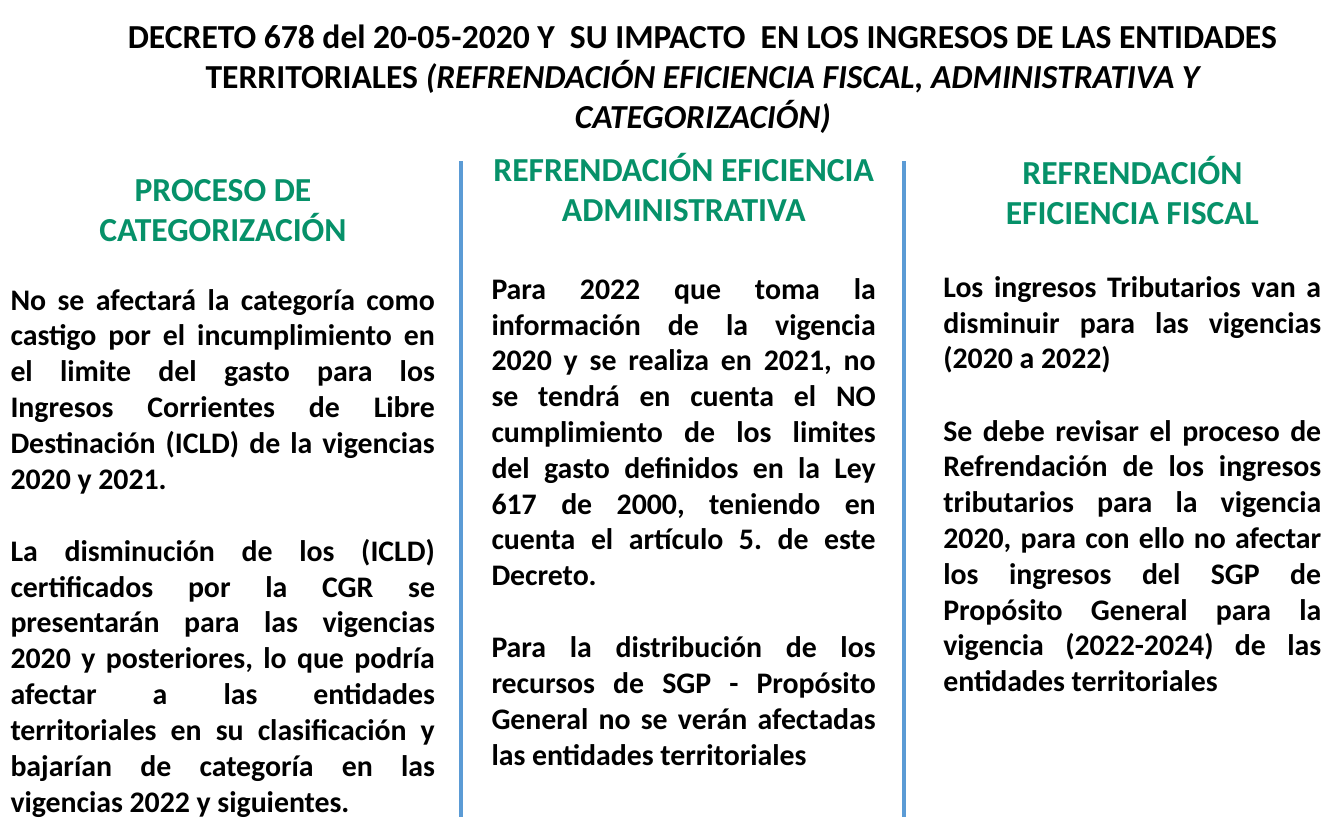
"""Build the slide on Decree 678 and its impact on territorial income."""
from typing import NamedTuple

from lxml import etree
from pptx import Presentation
from pptx.dml.color import RGBColor
from pptx.enum.shapes import MSO_CONNECTOR
from pptx.enum.text import MSO_ANCHOR, MSO_AUTO_SIZE, PP_ALIGN
from pptx.oxml.ns import qn
from pptx.util import Cm, Pt

CENTER, JUSTIFY = PP_ALIGN.CENTER, PP_ALIGN.JUSTIFY
TOP, FIXED = MSO_ANCHOR.TOP, MSO_AUTO_SIZE.NONE
STRAIGHT = MSO_CONNECTOR.STRAIGHT
COLORS = {"text": "000000", "head": "069169", "rule": "5B9BD5"}
FONT = "Calibri"
HEAD_SIZE, BODY_SIZE = 18, 16
BODY_GAP = 19.5
RULE_TOP, RULE_END = 3.05, 15.44
RULES = (8.71, 17.09)


class Column(NamedTuple):
    """A headed column of text, with lengths in centimetres and its gap in points."""
    left: float
    top: float
    width: float
    height: float
    gap: float
    head: str
    body: tuple[str, ...]


COLUMNS = (
    Column(-0.05, 3.05, 8.53, 13.34, 17, "PROCESO DE CATEGORIZACIÓN", (
        "No se afectará la categoría como castigo por el incumplimiento en el limite "
        "del gasto para los Ingresos Corrientes de Libre Destinación (ICLD) de la "
        "vigencias 2020 y 2021.",
        "La disminución de los (ICLD) certificados por la CGR se presentarán para las "
        "vigencias 2020 y posteriores, lo que podría afectar a las entidades "
        "territoriales en su clasificación y bajarían de categoría en las vigencias "
        "2022 y siguientes.",
    )),
    Column(9.04, 2.67, 7.77, 13, 22, "REFRENDACIÓN EFICIENCIA ADMINISTRATIVA", (
        "Para 2022 que toma la información de la vigencia 2020 y se realiza en 2021, "
        "no se tendrá en cuenta el NO cumplimiento de los limites del gasto definidos "
        "en la Ley 617 de 2000, teniendo en cuenta el artículo 5. de este Decreto.",
        "Para la distribución de los recursos de SGP - Propósito General no se verán "
        "afectadas las entidades territoriales",
    )),
    Column(17.58, 2.72, 7.65, 11.46, BODY_GAP, "REFRENDACIÓN EFICIENCIA FISCAL", (
        "Los ingresos Tributarios van a disminuir para las vigencias (2020 a 2022)",
        "Se debe revisar el proceso de Refrendación de los ingresos tributarios para la "
        "vigencia 2020, para con ello no afectar los ingresos del SGP de Propósito "
        "General para la vigencia (2022-2024) de las entidades territoriales",
    )),
)


def style(para, size: float, color: str, align) -> None:
    """Set the font and alignment of a paragraph."""
    para.alignment = align
    font = para.font
    font.name, font.size, font.bold = FONT, Pt(size), True
    font.color.rgb = RGBColor.from_string(COLORS[color])


def draw_title(slide) -> None:
    """Place and fill the title."""
    title = slide.shapes.title
    title.left, title.top = Cm(1.17), Cm(0.15)
    title.width, title.height = Cm(24.23), Cm(2.6)
    frame = title.text_frame
    frame.word_wrap, frame.auto_size, frame.vertical_anchor = True, FIXED, TOP
    para = frame.paragraphs[0]
    para.add_run().text = (
        "DECRETO 678 del 20-05-2020 Y  SU IMPACTO  EN LOS INGRESOS "
        "DE LAS ENTIDADES TERRITORIALES ")
    scope = para.add_run()
    scope.text = "(REFRENDACIÓN EFICIENCIA FISCAL, ADMINISTRATIVA Y CATEGORIZACIÓN)"
    scope.font.italic = True
    style(para, HEAD_SIZE, "text", CENTER)


def draw_column(slide, col: Column) -> None:
    """Draw a heading with its justified paragraphs."""
    box = slide.shapes.add_textbox(
        Cm(col.left), Cm(col.top), Cm(col.width), Cm(col.height))
    frame = box.text_frame
    frame.word_wrap = True
    head = frame.paragraphs[0]
    head.text = col.head
    style(head, HEAD_SIZE, "head", CENTER)
    for index, text in enumerate(col.body):
        para = frame.add_paragraph()
        para.text = text
        para.space_before = Pt(BODY_GAP if index else col.gap)
        style(para, BODY_SIZE, "text", JUSTIFY)


def draw_rule(slide, left: float) -> None:
    """Draw a vertical rule between columns."""
    rule = slide.shapes.add_connector(
        STRAIGHT, Cm(left), Cm(RULE_TOP), Cm(left), Cm(RULE_END))
    rule.line.color.rgb = RGBColor.from_string(COLORS["rule"])
    rule.line.width = Pt(2.25)
    etree.SubElement(rule._element.spPr, qn("a:effectLst"))


def main() -> None:
    """Build and save the slide."""
    deck = Presentation()
    deck.slide_width, deck.slide_height = Cm(25.4), Cm(15.88)
    slide = deck.slides.add_slide(deck.slide_layouts.get_by_name("Title Only"))
    draw_title(slide)
    for col in COLUMNS:
        draw_column(slide, col)
    for left in RULES:
        draw_rule(slide, left)
    deck.save("out.pptx")


if __name__ == "__main__":
    main()
